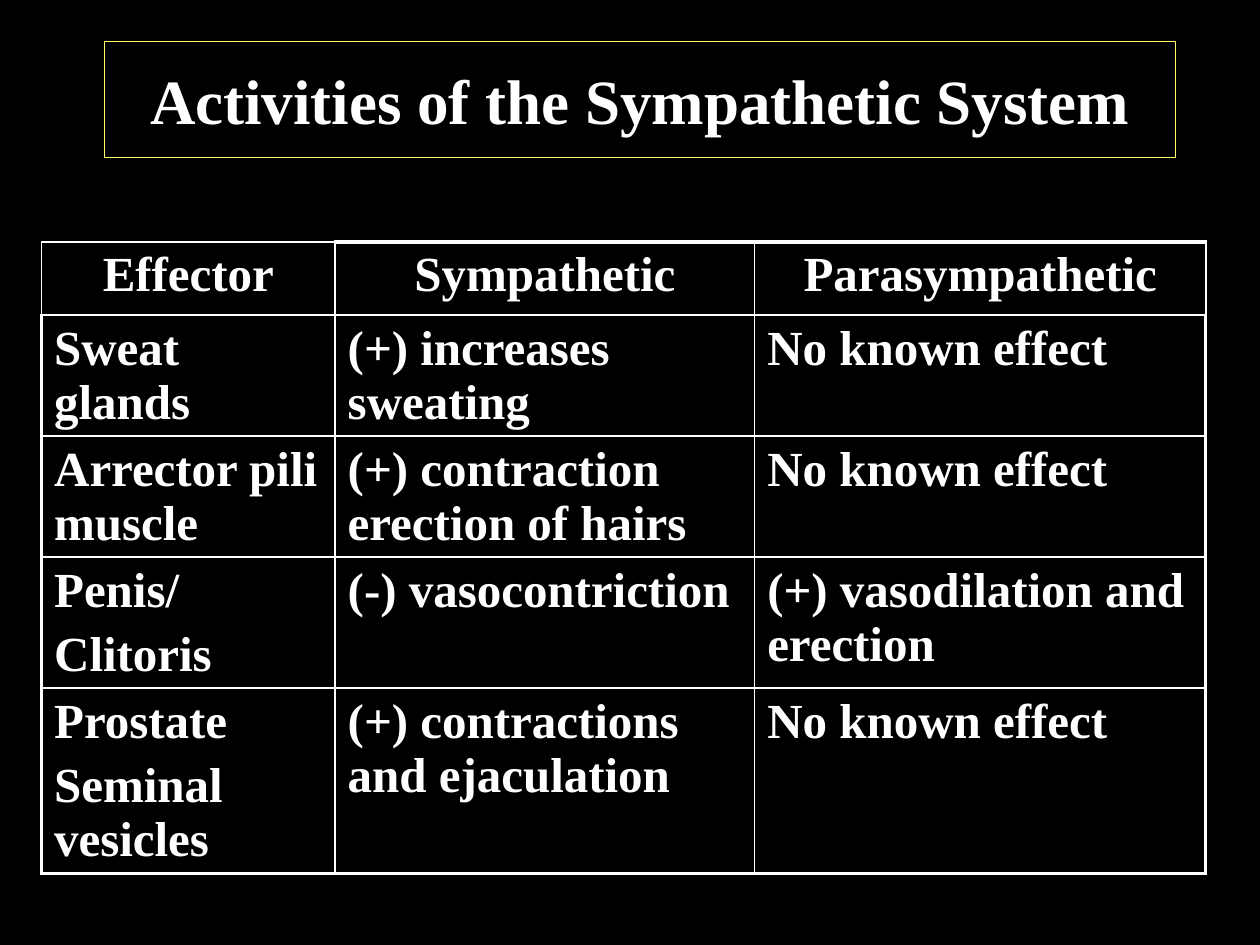
from lxml import etree
from pptx import Presentation, util as u
from pptx.dml.color import RGBColor
from pptx.enum import shapes, text
from pptx.oxml import ns

BLACK, WHITE, YELLOW = "000000", "FFFFFF", "FFFF66"
THIN, THICK = 1, 2.25

TITLE = "Activities of the Sympathetic System"
COLUMN_WIDTHS = [2.33, 3.33, 3.58]
ROW_HEIGHTS = [0.58, 0.85, 0.9, 0.9, 1.15]
EFFECTS = [
    ["Effector", "Sympathetic", "Parasympathetic"],
    ["Sweat glands", "(+) increases sweating", "No known effect"],
    ["Arrector pili muscle", "(+) contraction erection of hairs", "No known effect"],
    ["Penis/\nClitoris", "(-) vasocontriction", "(+) vasodilation and erection"],
    ["Prostate\nSeminal vesicles", "(+) contractions and ejaculation", "No known effect"],
]


def color(hex_code):
    return RGBColor.from_string(hex_code)


class EffectSlide:
    font = {"name": "Times New Roman", "bold": True}

    def __init__(self, presentation):
        self.slide = presentation.slides.add_slide(presentation.slide_layouts[6])
        background = self.slide.background.fill
        background.solid()
        background.fore_color.rgb = color(BLACK)

    def set_words(self, frame, words, size, centered, space_before=0):
        frame.text = words
        align = text.PP_ALIGN.CENTER if centered else text.PP_ALIGN.LEFT
        for paragraph in frame.paragraphs:
            paragraph.alignment = align
            paragraph.space_before = u.Pt(space_before)
            for run in paragraph.runs:
                for key, value in {**self.font, "size": u.Pt(size)}.items():
                    setattr(run.font, key, value)
                run.font.color.rgb = color(WHITE)

    def title(self, words, *box):
        heading = self.slide.shapes.add_shape(
            shapes.MSO_SHAPE.RECTANGLE, *map(u.Inches, box))
        heading.shadow.inherit = False
        heading.fill.background()
        heading.line.color.rgb = color(YELLOW)
        heading.line.width = u.Pt(0.75)
        heading.text_frame.vertical_anchor = text.MSO_ANCHOR.MIDDLE
        heading.text_frame.word_wrap = True
        self.set_words(heading.text_frame, words, 36, True)

    def border(self, cell, widths):
        """Draw the cell edges; widths maps L, R, T and B to points."""
        properties = cell._tc.get_or_add_tcPr()
        for side, width in widths.items():
            edge = etree.SubElement(properties, ns.qn(f"a:ln{side}"), w=str(u.Pt(width)))
            fill = etree.SubElement(edge, ns.qn("a:solidFill"))
            etree.SubElement(fill, ns.qn("a:srgbClr"), val=WHITE)

    def table(self, rows, left, top, widths, heights):
        grid = self.slide.shapes.add_table(
            len(rows), len(widths), u.Inches(left), u.Inches(top),
            u.Inches(sum(widths)), u.Inches(sum(heights))).table
        grid.first_row = grid.horz_banding = False
        for column, width in zip(grid.columns, widths):
            column.width = u.Inches(width)
        for row, height in zip(grid.rows, heights):
            row.height = u.Inches(height)

        last_row, last_column = len(rows) - 1, len(widths) - 1
        for r, row in enumerate(rows):
            for c, words in enumerate(row):
                cell = grid.cell(r, c)
                self.set_words(cell.text_frame, words, 28, r == 0, space_before=5.6)
                thick = {
                    "L": c == 0 and r > 0,
                    "R": c == last_column and r > 0,
                    "T": r == 0 and c > 0,
                    "B": r == last_row,
                }
                self.border(cell, {side: THICK if on else THIN for side, on in thick.items()})
                cell.fill.solid()
                cell.fill.fore_color.rgb = color(BLACK)


def main():
    presentation = Presentation()
    presentation.slide_width = u.Inches(10)
    presentation.slide_height = u.Inches(7.5)
    slide = EffectSlide(presentation)
    slide.title(TITLE, 0.83, 0.33, 8.5, 0.92)
    slide.table(EFFECTS, 0.33, 1.92, COLUMN_WIDTHS, ROW_HEIGHTS)
    presentation.save("out.pptx")


if __name__ == "__main__":
    main()
